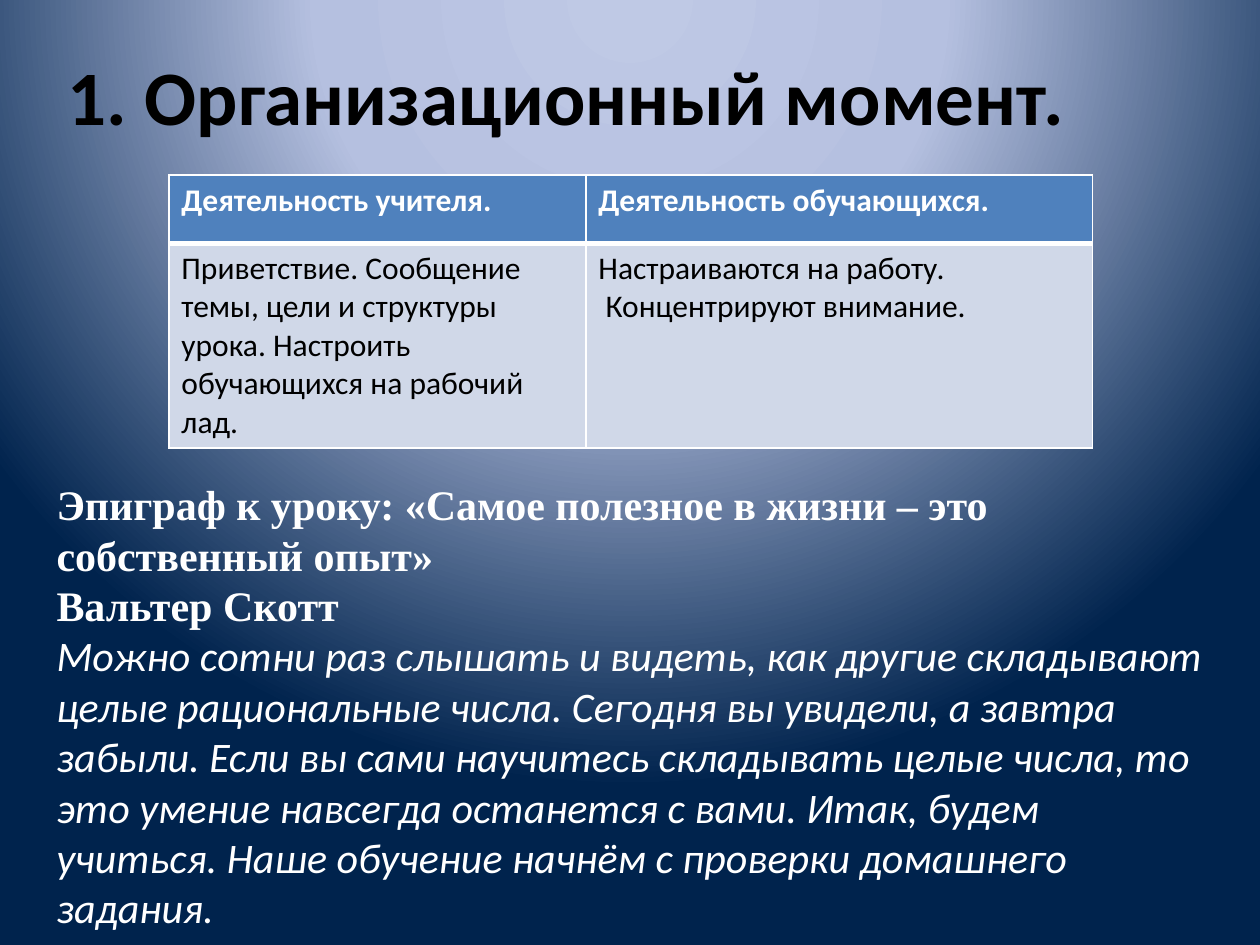
"""Build the lesson slide with a title, an activity table and an epigraph."""
from dataclasses import dataclass

from pptx import Presentation
from pptx.dml.color import RGBColor
from pptx.enum.text import MSO_ANCHOR as Anchor, MSO_AUTO_SIZE as AutoSize, PP_ALIGN as Align
from pptx.oxml import parse_xml
from pptx.oxml.ns import nsdecls
from pptx.util import Pt

TITLE = "1. Организационный момент."
ACTIVITIES = [
    ("Деятельность учителя.", "Деятельность обучающихся."),
    (
        "Приветствие. Сообщение темы, цели и структуры урока. "
        "Настроить обучающихся на рабочий лад.",
        "Настраиваются на работу.\n Концентрируют внимание.",
    ),
]
EPIGRAPH = [
    "Эпиграф к уроку: «Самое полезное в жизни – это собственный опыт»",
    "Вальтер Скотт",
]
COMMENTARY = (
    "Можно сотни раз слышать и видеть, как другие складывают целые рациональные числа. "
    "Сегодня вы увидели, а завтра забыли. Если вы сами научитесь складывать целые числа, "
    "то это умение навсегда останется с вами. Итак, будем учиться. "
    "Наше обучение начнём с проверки домашнего задания."
)
COLUMN_WIDTHS = (238.3, 289.4)
ROW_HEIGHTS = (38.9, 108.7)


@dataclass(frozen=True)
class Theme:
    black: str = "000000"
    white: str = "FFFFFF"
    header_fill: str = "4F81BD"
    body_fill: str = "D0D8E8"
    gradient: tuple = ((0, "BFC9E5"), (40, "B5C0E0"), (100, "00234D"))
    sans: str = "Calibri"
    serif: str = "Times New Roman"
    title_size: int = 44
    text_size: int = 24
    table_size: int = 18
    thin: int = 1
    thick: int = 3


THEME = Theme()


def format_runs(paragraph, font_name, size, color, bold=False, italic=False):
    for run in paragraph.runs:
        font = run.font
        font.name, font.size = font_name, Pt(size)
        font.bold, font.italic = bold, italic
        font.color.rgb = RGBColor.from_string(color)


def paint_background(slide):
    stops = "".join(
        f'<a:gs pos="{position * 1000}"><a:srgbClr val="{color}"/></a:gs>'
        for position, color in THEME.gradient
    )
    gradient = parse_xml(
        f'<a:gradFill {nsdecls("a")} rotWithShape="1"><a:gsLst>{stops}</a:gsLst>'
        '<a:path path="circle"><a:fillToRect l="50000" t="-80000" r="50000" b="180000"/>'
        "</a:path></a:gradFill>"
    )
    slide.background.fill.solid()
    solid = slide.element.xpath("./p:cSld/p:bg/p:bgPr/a:solidFill")[0]
    solid.getparent().replace(solid, gradient)


def set_borders(cell, widths):
    properties = cell._tc.get_or_add_tcPr()
    for index, (side, width) in enumerate(widths.items()):
        properties.insert(index, parse_xml(
            f'<a:ln{side} {nsdecls("a")} w="{Pt(width)}"><a:solidFill>'
            f'<a:srgbClr val="{THEME.white}"/></a:solidFill></a:ln{side}>'
        ))


def add_title(slide):
    title = slide.shapes.title
    title.left, title.top, title.width, title.height = Pt(0), Pt(21.6), Pt(648), Pt(55.4)
    frame = title.text_frame
    frame.text = TITLE
    frame.word_wrap, frame.auto_size = True, AutoSize.NONE
    frame.vertical_anchor, frame.margin_top = Anchor.TOP, Pt(6)
    paragraph = frame.paragraphs[0]
    paragraph.alignment = Align.CENTER
    format_runs(paragraph, THEME.sans, THEME.title_size, THEME.black, bold=True)


def add_activities(slide):
    table = slide.shapes.add_table(
        len(ROW_HEIGHTS), len(COLUMN_WIDTHS), Pt(96.5), Pt(100.1),
        Pt(sum(COLUMN_WIDTHS)), Pt(sum(ROW_HEIGHTS)),
    ).table
    for column, width in zip(table.columns, COLUMN_WIDTHS):
        column.width = Pt(width)
    for row_index, (row, height) in enumerate(zip(table.rows, ROW_HEIGHTS)):
        row.height = Pt(height)
        header = row_index == 0
        fill = THEME.header_fill if header else THEME.body_fill
        color = THEME.white if header else THEME.black
        top, bottom = (THEME.thin, THEME.thick) if header else (THEME.thick, THEME.thin)
        for cell, text in zip(row.cells, ACTIVITIES[row_index]):
            cell.text_frame.text = text
            cell.fill.solid()
            cell.fill.fore_color.rgb = RGBColor.from_string(fill)
            set_borders(cell, {"L": THEME.thin, "R": THEME.thin, "T": top, "B": bottom})
            for paragraph in cell.text_frame.paragraphs:
                format_runs(paragraph, THEME.sans, THEME.table_size, color, bold=header)


def add_epigraph(slide):
    frame = slide.shapes.add_textbox(Pt(25.2), Pt(270), Pt(668.9), Pt(269.3)).text_frame
    frame.word_wrap, frame.auto_size = True, AutoSize.SHAPE_TO_FIT_TEXT
    frame.text = "\n".join([*EPIGRAPH, COMMENTARY])
    *quote, commentary = frame.paragraphs
    for paragraph in quote:
        format_runs(paragraph, THEME.serif, THEME.text_size, THEME.white, bold=True)
    format_runs(commentary, THEME.sans, THEME.text_size, THEME.white, italic=True)


def main():
    presentation = Presentation()
    presentation.slide_width, presentation.slide_height = Pt(720), Pt(540)
    slide = presentation.slides.add_slide(presentation.slide_layouts[5])
    paint_background(slide)
    add_title(slide)
    add_activities(slide)
    add_epigraph(slide)
    presentation.save("out.pptx")


if __name__ == "__main__":
    main()
